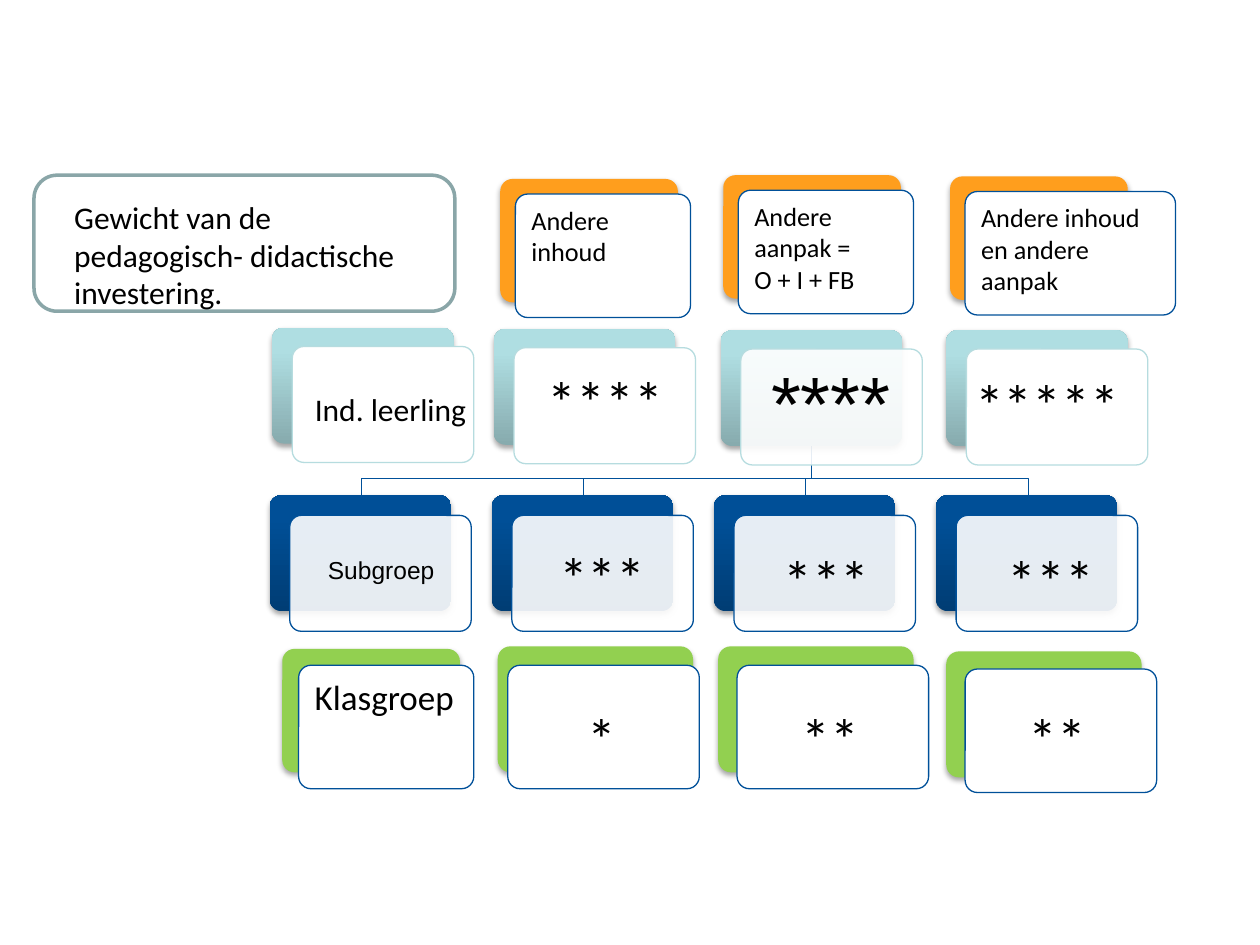
from dataclasses import dataclass

from lxml import etree
from pptx import Presentation
from pptx.dml.color import RGBColor
from pptx.enum.shapes import MSO_SHAPE as Shape
from pptx.enum.text import MSO_ANCHOR as Anchor, MSO_AUTO_SIZE as AutoSize, PP_ALIGN as Align
from pptx.oxml import parse_xml
from pptx.oxml.ns import nsdecls, qn
from pptx.util import Inches, Pt


@dataclass(frozen=True)
class Theme:
    """Colours, fonts and type sizes (points)."""
    font: str = "Calibri"
    alt_font: str = "Arial"
    ink: str = "000000"
    white: str = "FFFFFF"
    orange: str = "FF9E1D"
    green: str = "92D050"
    teal: tuple = ("87ABAE", "AFDEE2")
    blue: tuple = ("003D74", "004F97")
    navy_line: str = "005099"
    teal_line: str = "B6DCDF"
    frame_line: str = "8AA6A8"
    heading: float = 15
    label: float = 18
    group: float = 20
    subgroup: float = 14
    stars: float = 33
    big_stars: float = 44


THEME = Theme()


def rgb(value):
    return RGBColor.from_string(value)


def write(frame, text, size, font=THEME.font, align=Align.LEFT, anchor=Anchor.TOP,
          spacing=None, inset=None, wrap=True, grow=False):
    """Fill a text frame; each line of text becomes a paragraph."""
    frame.word_wrap = wrap
    frame.vertical_anchor = anchor
    frame.auto_size = AutoSize.SHAPE_TO_FIT_TEXT if grow else AutoSize.NONE
    if inset is not None:
        frame.margin_left = frame.margin_right = Inches(inset)
        frame.margin_top = frame.margin_bottom = Inches(inset)
    for i, line in enumerate(text.split("\n")):
        paragraph = frame.paragraphs[0] if i == 0 else frame.add_paragraph()
        paragraph.alignment = align
        if spacing:
            paragraph.line_spacing = spacing
        run = paragraph.add_run()
        run.text = line
        run.font.name = font
        run.font.size = Pt(size)
        run.font.color.rgb = rgb(THEME.ink)


class Board:
    """The current slide and the kinds of element it is made of."""

    def __init__(self, slide, theme):
        self.slide, self.theme = slide, theme

    def box(self, left, top, width, height, fill, line=None, weight=0.75,
            opacity=100, corner=0.1):
        shape = self.slide.shapes.add_shape(
            Shape.ROUNDED_RECTANGLE, *map(Inches, (left, top, width, height)))
        shape.adjustments[0] = corner
        shape.shadow.inherit = False
        if isinstance(fill, tuple):
            shape.fill.gradient()
            shape.fill.gradient_angle = 90
            for stop, colour, position in zip(shape.fill.gradient_stops, fill, (0, 0.8)):
                stop.color.rgb = rgb(colour)
                stop.position = position
        else:
            shape.fill.solid()
            shape.fill.fore_color.rgb = rgb(fill)
        if opacity < 100:
            colour = shape.fill._xPr.find(qn("a:solidFill"))[0]
            etree.SubElement(colour, qn("a:alpha")).set("val", str(opacity * 1000))
        if line:
            shape.line.color.rgb = rgb(line)
            shape.line.width = Pt(weight)
        else:
            shape.line.fill.background()
        return shape

    def backing(self, left, top, width, height, fill):
        """Coloured plate with a soft shadow, behind a card."""
        plate = self.box(left, top, width, height, fill)
        effects = plate._element.spPr.find(qn("a:effectLst"))
        effects.append(parse_xml(
            f'<a:outerShdw {nsdecls("a")} blurRad="{Pt(3.1)}" dist="{Pt(1.8)}" '
            'dir="5400000" rotWithShape="0"><a:srgbClr val="000000">'
            '<a:alpha val="35000"/></a:srgbClr></a:outerShdw>'))

    def text(self, left, top, width, height, text, size, **style):
        area = self.slide.shapes.add_textbox(*map(Inches, (left, top, width, height)))
        write(area.text_frame, text, size, **style)

    def centred(self, left, top, width, height, text, size, **style):
        self.text(left, top, width, height, text, size,
                  align=Align.CENTER, spacing=0.9, **style)

    def branch(self, *points):
        """Open elbow line through the points."""
        (x, y), *rest = [(Inches(px), Inches(py)) for px, py in points]
        builder = self.slide.shapes.build_freeform(x, y)
        builder.add_line_segments(rest, close=False)
        line = builder.convert_to_shape()
        line.shadow.inherit = False
        line.fill.background()
        line.line.color.rgb = rgb(self.theme.navy_line)
        line.line.width = Pt(0.75)


def build(board):
    theme = board.theme
    stars = dict(size=theme.stars)

    # Tree lines from the individual row to the subgroup row
    for end in (8.16, 6.39, 4.63, 2.87):
        board.branch((6.44, 3.54), (6.44, 3.8), (end, 3.8), (end, 3.93))

    # Individual pupil row
    for left, top, opacity in ((5.72, 2.62, 90), (2.16, 2.6, 100),
                               (3.92, 2.61, 100), (7.51, 2.62, 100)):
        board.backing(left, top, 1.44, 0.92, theme.teal)
        board.box(left + 0.16, top + 0.15, 1.44, 0.92, theme.white,
                  theme.teal_line, opacity=opacity)
    board.text(2.4, 3.05, 1.42, 0.4, "Ind. leerling", theme.label, wrap=False, grow=True)
    board.centred(4.11, 2.78, 1.39, 0.86, "****", anchor=Anchor.MIDDLE, inset=0.14, **stars)
    board.centred(5.9, 2.8, 1.39, 0.86, "****", theme.big_stars, font=theme.alt_font,
                  anchor=Anchor.MIDDLE, inset=0.18)
    board.centred(7.52, 2.81, 1.58, 0.86, "*****", anchor=Anchor.MIDDLE, inset=0.14, **stars)

    # Subgroup row
    for column in range(4):
        left = 2.14 + 1.763 * column
        board.backing(left, 3.93, 1.44, 0.92, theme.blue)
        board.box(left + 0.16, 4.09, 1.44, 0.92, theme.white, theme.navy_line, opacity=90)
    board.centred(2.33, 4.11, 1.39, 0.86, "Subgroep", theme.subgroup,
                  font=theme.alt_font, anchor=Anchor.MIDDLE, inset=0.06)
    for left, top, width in ((4.28, 4.31, 1), (6.06, 4.34, 1), (7.8, 4.34, 1.08)):
        board.centred(left, top, width, 0.6, "***", grow=True, **stars)

    # Class group row
    board.backing(2.24, 5.15, 1.41, 0.98, theme.green)
    class_card = board.box(2.37, 5.28, 1.39, 0.98, theme.white, theme.navy_line)
    write(class_card.text_frame, "Klasgroep", theme.group)
    for left, top, card_left, card_top, stars_left, rating in (
            (3.95, 5.13, 4.03, 5.28, 4.28, "*"),
            (5.7, 5.13, 5.85, 5.28, 6.09, "**"),
            (7.51, 5.17, 7.66, 5.31, 7.89, "**")):
        board.backing(left, top, 1.55, 1, theme.green)
        board.box(card_left, card_top, 1.52, 0.98, theme.white, theme.navy_line)
        board.centred(stars_left, 5.59, 1, 0.6, rating, grow=True, **stars)

    # Column headings
    for left, top, width, heading in (
            (3.97, 1.42, 1.39, "Andere inhoud"),
            (5.74, 1.39, 1.39, "Andere aanpak =\nO + I + FB"),
            (7.54, 1.4, 1.67, "Andere inhoud en andere aanpak")):
        board.backing(left, top, 1.41, 0.98, theme.orange)
        card = board.box(left + 0.12, top + 0.12, width, 0.98, theme.white, theme.navy_line)
        write(card.text_frame, heading, theme.heading)

    # Framed caption
    board.box(0.27, 1.39, 3.34, 1.08, theme.white, theme.frame_line, weight=2, corner=0.17)
    board.text(0.49, 1.52, 2.88, 1.01, "Gewicht van de pedagogisch- didactische investering.",
               theme.label, grow=True)


def main():
    deck = Presentation()
    deck.slide_width, deck.slide_height = Inches(10), Inches(7.5)
    build(Board(deck.slides.add_slide(deck.slide_layouts[6]), THEME))
    deck.save("out.pptx")


if __name__ == "__main__":
    main()
